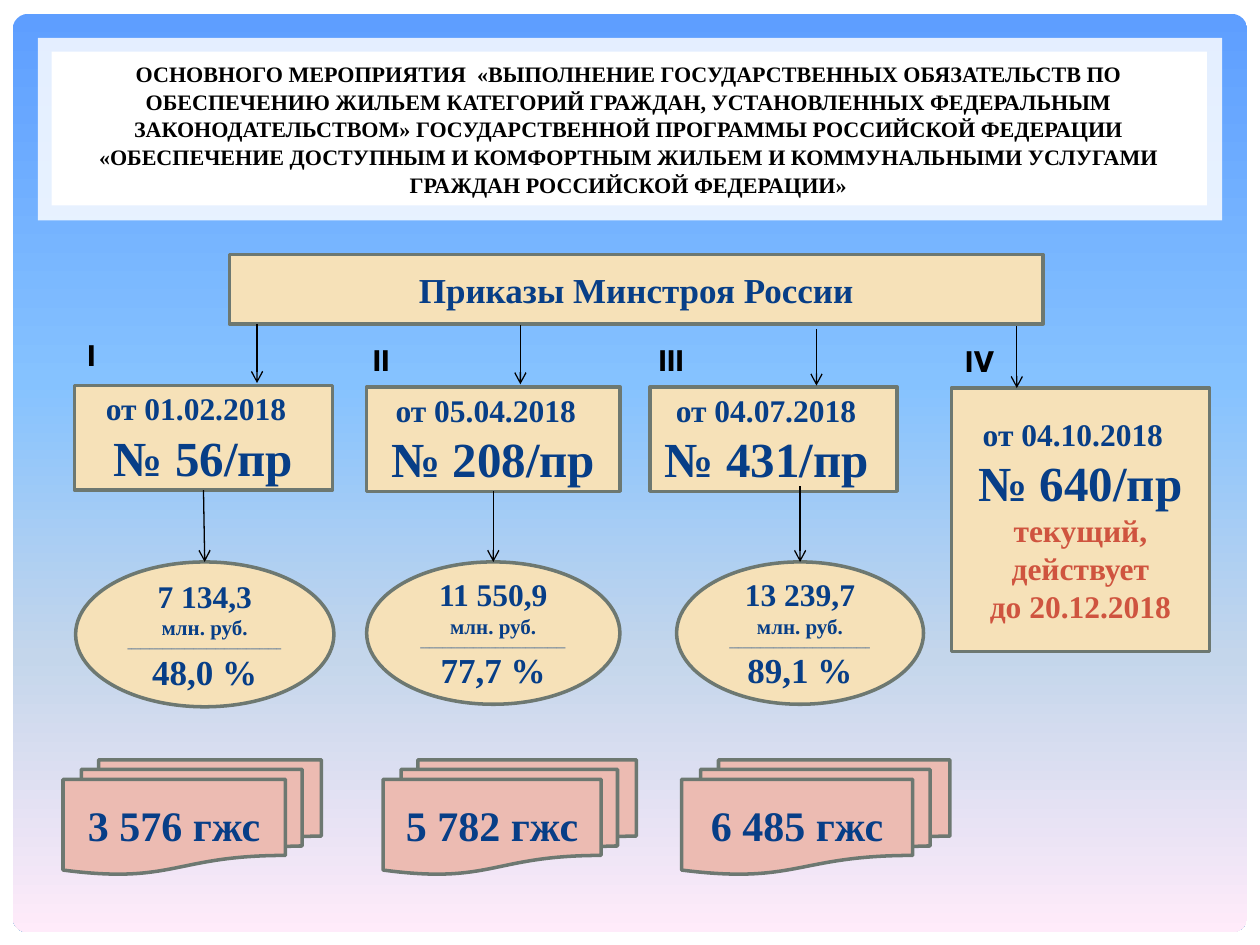
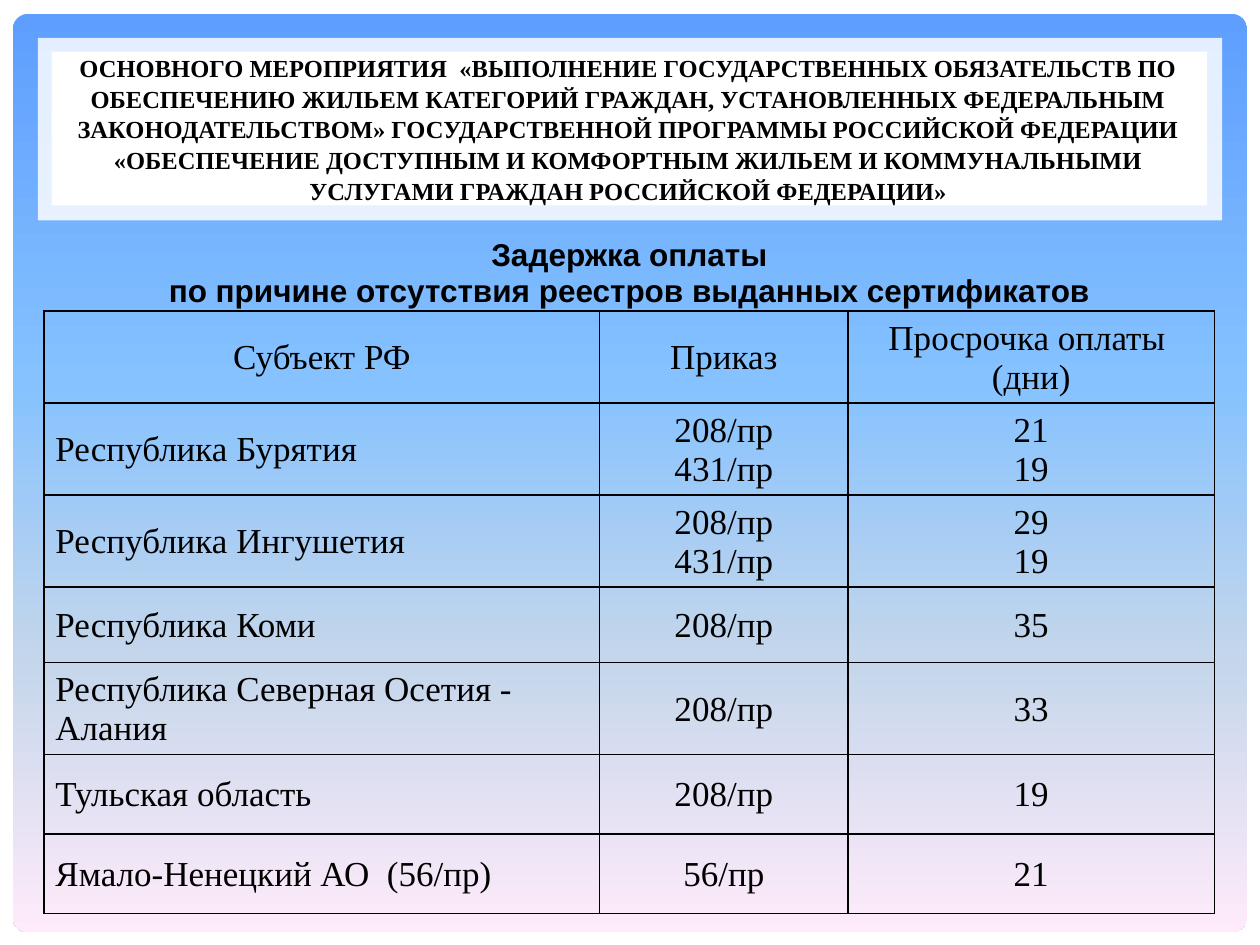
from lxml.etree import SubElement
from pptx import Presentation
from pptx.dml.color import RGBColor as RGB
from pptx.enum.shapes import MSO_CONNECTOR as CONN, MSO_SHAPE as SHAPE
from pptx.enum.text import MSO_ANCHOR as ANCHOR, PP_ALIGN as ALIGN
from pptx.oxml import parse_xml
from pptx.oxml.ns import nsdecls, qn
from pptx.util import Inches, Pt

COLORS = {
    "black": "000000",
    "white": "FFFFFF",
    "navy": "073E87",
    "red": "CF543F",
    "cream": "F6E1B8",
    "pink": "ECBBB2",
    "border": "6D7871",
}
GRADIENT = [(0, "5E9EFF"), (40, "85C2FF"), (70, "C4D6EB"), (100, "FFEBFA")]
SERIF, SANS, LABEL = "Times New Roman", "Arial", "League Spartan"
TITLE = (
    "ОСНОВНОГО МЕРОПРИЯТИЯ  «ВЫПОЛНЕНИЕ ГОСУДАРСТВЕННЫХ ОБЯЗАТЕЛЬСТВ ПО "
    "ОБЕСПЕЧЕНИЮ ЖИЛЬЕМ КАТЕГОРИЙ ГРАЖДАН, УСТАНОВЛЕННЫХ ФЕДЕРАЛЬНЫМ "
    "ЗАКОНОДАТЕЛЬСТВОМ» ГОСУДАРСТВЕННОЙ ПРОГРАММЫ РОССИЙСКОЙ ФЕДЕРАЦИИ "
    "«ОБЕСПЕЧЕНИЕ ДОСТУПНЫМ И КОМФОРТНЫМ ЖИЛЬЕМ И КОММУНАЛЬНЫМИ УСЛУГАМИ "
    "ГРАЖДАН РОССИЙСКОЙ ФЕДЕРАЦИИ»"
)


def inches(values):
    return [Inches(v) for v in values]


class Deck:
    def __init__(self):
        self.prs = Presentation()
        self.prs.slide_width, self.prs.slide_height = inches((10, 7.5))
        self.s = None

    def color(self, name):
        return RGB.from_string(COLORS[name])

    def slide(self, title_size):
        self.s = self.prs.slides.add_slide(self.prs.slide_layouts[6])
        fill = self.s.background.fill
        fill.solid()
        fill.fore_color.rgb = self.color("white")
        panel = self.shape(SHAPE.ROUNDED_RECTANGLE, (0.1, 0.11, 9.8, 7.29), "white", None)
        panel.adjustments[0] = 0.017
        self.gradient(panel)
        frame = self.shape(SHAPE.RECTANGLE, (0.3, 0.3, 9.4, 1.45), "white", None)
        srgb = frame._element.spPr.find(qn("a:solidFill"))[0]
        SubElement(srgb, qn("a:alpha"), val="83000")
        self.shape(SHAPE.RECTANGLE, (0.41, 0.41, 9.17, 1.22), "white", None)
        title = self.text((0.47, 0.45, 9.03, 1.14), [(TITLE, title_size)], "black")
        title.text_frame.paragraphs[0].line_spacing = 1.05

    def gradient(self, sp):
        stops = "".join(
            f'<a:gs pos="{pos * 1000}"><a:srgbClr val="{rgb}"/></a:gs>' for pos, rgb in GRADIENT
        )
        solid = sp._element.spPr.find(qn("a:solidFill"))
        solid.getparent().replace(solid, parse_xml(
            f'<a:gradFill {nsdecls("a")}><a:gsLst>{stops}</a:gsLst>'
            '<a:lin ang="5400000" scaled="0"/></a:gradFill>'
        ))

    def paragraphs(self, tf, lines, color="navy", font=SERIF, bold=True, align=ALIGN.CENTER):
        for i, (text, size, *options) in enumerate(lines):
            p = tf.paragraphs[0] if i == 0 else tf.add_paragraph()
            p.alignment = align
            extra = options[0] if options else {}
            if "right" in extra:
                p._p.get_or_add_pPr().set("marR", str(Inches(extra["right"])))
            r = p.add_run()
            r.text = text
            for name, value in {"name": font, "size": Pt(size), "bold": bold}.items():
                setattr(r.font, name, value)
            r.font.color.rgb = self.color(extra.get("color", color))

    def shape(self, kind, box, fill, line="border", lines=()):
        sp = self.s.shapes.add_shape(kind, *inches(box))
        sp.shadow.inherit = False
        sp.fill.solid()
        sp.fill.fore_color.rgb = self.color(fill)
        if line:
            sp.line.color.rgb = self.color(line)
            sp.line.width = Pt(2)
        else:
            sp.line.fill.background()
        sp.text_frame.vertical_anchor = ANCHOR.MIDDLE
        self.paragraphs(sp.text_frame, lines)
        return sp

    def text(self, box, lines, color, font=SERIF):
        sp = self.s.shapes.add_textbox(*inches(box))
        tf = sp.text_frame
        tf.word_wrap = True
        tf.vertical_anchor = ANCHOR.MIDDLE
        self.paragraphs(tf, lines, color, font)
        return sp

    def arrow(self, start, end, source=None, target=None):
        cn = self.s.shapes.add_connector(CONN.STRAIGHT, *inches(start + end))
        if source:
            cn.begin_connect(source, 2)
        if target:
            cn.end_connect(target, 0)
        cn.line.color.rgb = self.color("black")
        cn.line.width = Pt(0.75)
        SubElement(cn.line._get_or_add_ln(), qn("a:tailEnd"), type="arrow")
        SubElement(cn._element.spPr, qn("a:effectLst"))

    def borders(self, cell, sides):
        tcPr = cell._tc.get_or_add_tcPr()
        for i, side in enumerate("LRTB"):
            paint = (
                f'<a:solidFill><a:srgbClr val="{COLORS["black"]}"/></a:solidFill>'
                if side in sides else "<a:noFill/>"
            )
            tcPr.insert(i, parse_xml(f'<a:ln{side} {nsdecls("a")} w="12700">{paint}</a:ln{side}>'))

    def table(self, left, top, widths, heights, caption, rows):
        box = (left, top, sum(widths), sum(heights))
        table = self.s.shapes.add_table(len(heights), len(widths), *inches(box)).table
        table.first_row = table.horz_banding = False
        for col, width in zip(table.columns, widths):
            col.width = Inches(width)
        for row, height in zip(table.rows, heights):
            row.height = Inches(height)
        table.cell(0, 0).merge(table.cell(0, len(widths) - 1))
        for y, row in enumerate([[caption, "", ""]] + rows):
            for x, text in enumerate(row):
                cell = table.cell(y, x)
                region = x == 0 and y > 1
                margins = {"left": 0.09 if region else 0.01, "right": 0.01, "top": 0.01, "bottom": 0}
                for side, value in margins.items():
                    setattr(cell, f"margin_{side}", Inches(value))
                cell.vertical_anchor = ANCHOR.MIDDLE
                cell.fill.background()
                self.borders(cell, "LRTB" if y else "B")
                if text:
                    size, font = (20, SERIF) if y else (18, SANS)
                    lines = [(line, size) for line in text.split("\n")]
                    align = ALIGN.LEFT if region else ALIGN.CENTER
                    self.paragraphs(cell.text_frame, lines, "black", font, y == 0, align)


def orders_slide(deck):
    deck.slide(12.6)
    deck.shape(SHAPE.RECTANGLE, (1.82, 2.02, 6.46, 0.55), "cream",
               lines=[("Приказы Минстроя России", 20)])

    orders = [
        ((0.59, 3.06, 2.05, 0.83), "01.02.2018", "56", 0),
        ((2.91, 3.07, 2.01, 0.83), "05.04.2018", "208", 0),
        ((5.16, 3.07, 1.96, 0.83), "04.07.2018", "431", 0.11),
        ((7.55, 3.08, 2.05, 2.09), "04.10.2018", "640", 0),
    ]
    boxes = []
    for box, date, number, shift in orders:
        lines = [(f"от {date}", 18, {"right": 0.12}), (f"№ {number}/пр", 28, {"right": shift})]
        if number == "640":
            lines += [(t, 18, {"color": "red"}) for t in ("текущий,", "действует", "до 20.12.2018")]
        boxes.append(deck.shape(SHAPE.RECTANGLE, box, "cream", lines=lines))

    payments = [
        ((0.6, 4.46, 2.05, 1.15), "7 134,3", 35, "48,0 %"),
        ((2.91, 4.46, 2.01, 1.13), "11 550,9", 33, "77,7 %"),
        ((5.37, 4.46, 1.96, 1.13), "13 239,7", 32, "89,1 %"),
    ]
    ovals = [
        deck.shape(SHAPE.OVAL, box, "cream",
                   lines=[(amount, 18), ("млн. руб.", 12), ("_" * rule, 5), (share, 20)])
        for box, amount, rule, share in payments
    ]

    certificates = [(0.5, 2.05, "3 576"), (3.04, 2.01, "5 782"), (5.41, 2.13, "6 485")]
    for left, width, count in certificates:
        deck.shape(SHAPE.FLOWCHART_MULTIDOCUMENT, (left, 6.03, width, 0.91), "pink",
                   lines=[(f"{count} гжс", 24)])

    for x, top, bottom in [(2.04, 2.57, 3.04), (4.13, 2.58, 3.05), (6.48, 2.61, 3.06), (8.07, 2.59, 3.08)]:
        deck.arrow((x, top), (x, bottom))
    for x, source, target in zip((1.62, 3.92, 6.35), (boxes[0], boxes[1], None), ovals):
        deck.arrow((x, 3.86), (x, 4.46), source, target)

    labels = [("I", 0.35, 2.59, 0.76), ("II", 2.53, 2.63, 1), ("III", 4.83, 2.63, 1), ("IV", 7.28, 2.64, 1)]
    for numeral, left, top, width in labels:
        deck.text((left, top, width, 0.44), [(numeral, 18)], "black", LABEL)


def delays_slide(deck):
    deck.slide(14)
    deck.table(
        0.35, 1.86, [4.41, 1.97, 2.91], [0.57, 0.73, 0.73, 0.73, 0.6, 0.73, 0.63, 0.63],
        "Задержка оплаты\nпо причине отсутствия реестров выданных сертификатов",
        [
            ["Субъект РФ", "Приказ", "Просрочка оплаты  (дни)"],
            ["Республика Бурятия", "208/пр\n431/пр", "21\n19"],
            ["Республика Ингушетия", "208/пр\n431/пр", "29\n19"],
            ["Республика Коми", "208/пр", "35"],
            ["Республика Северная Осетия - Алания", "208/пр", "33"],
            ["Тульская область", "208/пр", "19"],
            ["Ямало-Ненецкий АО  (56/пр)", "56/пр", "21"],
        ],
    )


def main():
    deck = Deck()
    orders_slide(deck)
    delays_slide(deck)
    deck.prs.save("out.pptx")


if __name__ == "__main__":
    main()
